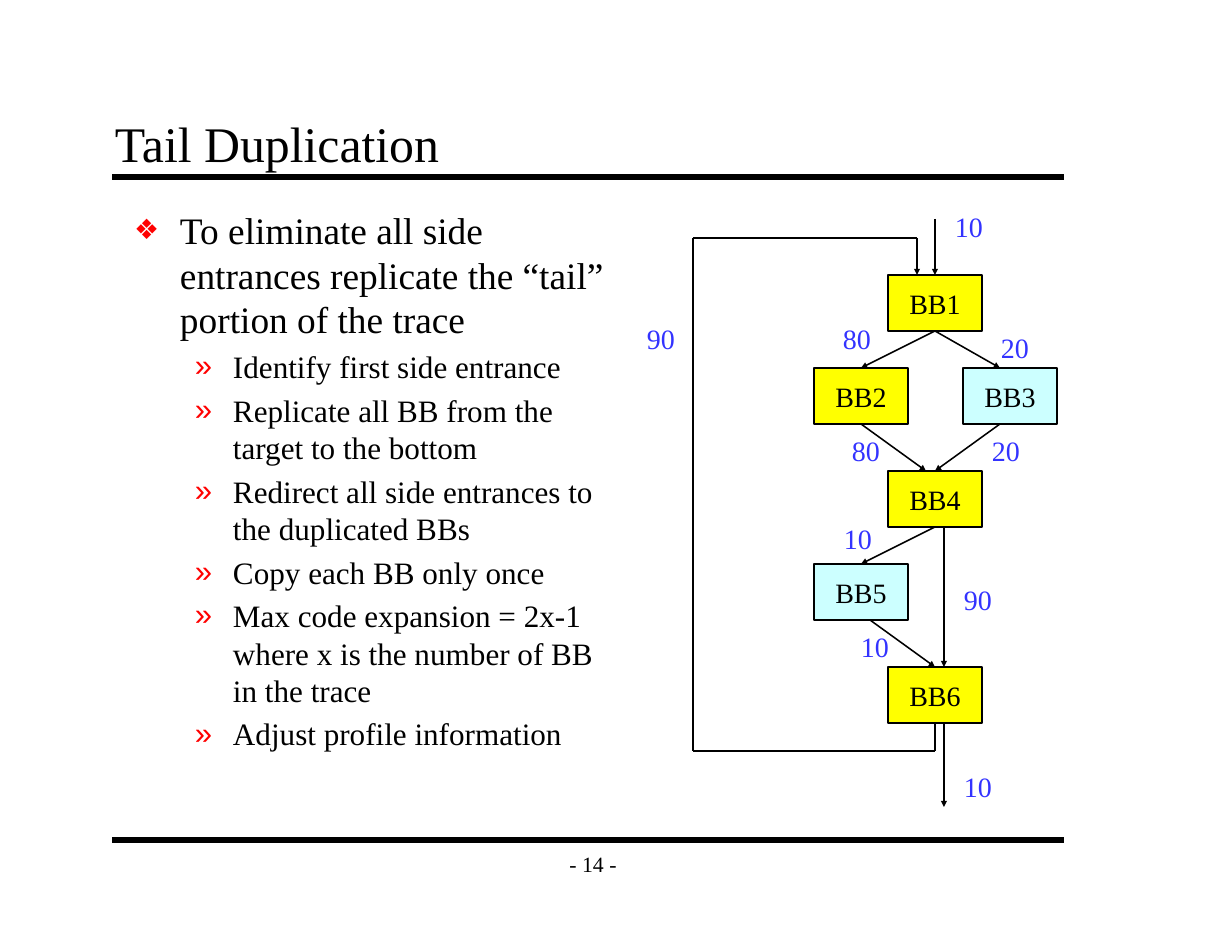
from lxml import etree
from pptx import Presentation
from pptx import util as u
from pptx.dml.color import RGBColor
from pptx.enum import shapes, text
from pptx.oxml.ns import qn

# Content
COLORS = {"ink": "000000", "trace": "FFFF00", "side": "CCFFFF",
          "weight": "3333FF", "bullet": "FF0000"}
FONT = "Times New Roman"
TITLE = "Tail Duplication"
PAGE = "- 14 -"
POINTS = [
    (0, "To eliminate all side entrances replicate the “tail” portion of the trace"),
    (1, "Identify first side entrance"),
    (1, "Replicate all BB from the target to the bottom"),
    (1, "Redirect all side entrances to the duplicated BBs"),
    (1, "Copy each BB only once"),
    (1, "Max code expansion = 2x-1 where x is the number of BB in the trace"),
    (1, "Adjust profile information"),
]
# Per level: text size, bullet, bullet size %, left margin px, hanging indent px
LEVELS = [(24, "❖", 75, 46, 46), (20, "»", 100, 99, 38)]

# Flow graph: name -> (column, top, kind)
LEFT, MIDDLE, RIGHT = 814, 888, 963
BLOCK_W, BLOCK_H = 94, 56
BLOCKS = {
    "BB1": (MIDDLE, 275, "trace"), "BB2": (LEFT, 368, "trace"),
    "BB3": (RIGHT, 368, "side"), "BB4": (MIDDLE, 471, "trace"),
    "BB5": (LEFT, 564, "side"), "BB6": (MIDDLE, 667, "trace"),
}
TOP, BOTTOM = 0, 2
# Ends are (block, side) or (x, y)
ARROWS = [
    ((935, 219), ("BB1", TOP)),
    (("BB1", BOTTOM), ("BB2", TOP)),
    (("BB1", BOTTOM), (1000, 368)),
    (("BB2", BOTTOM), (926, 471)),
    ((1000, 424), ("BB4", TOP)),
    (("BB4", BOTTOM), ("BB5", TOP)),
    ((944, 527), (944, 667)),
    ((870, 620), ("BB6", TOP)),
    ((944, 723), (944, 807)),
]
BACK_EDGE = [("BB6", BOTTOM), (935, 751), (693, 751), (693, 238), (917, 238), (917, 275)]
WEIGHTS = [
    ("10", 943, 205), ("90", 635, 317), ("80", 831, 317), ("20", 989, 326),
    ("80", 840, 429), ("20", 980, 429), ("10", 832, 517), ("90", 952, 578),
    ("10", 849, 625), ("10", 952, 765),
]
RULES = [177, 840]


def px(n):
    return u.Emu(round(n * 914400 / 112))


def rgb(name):
    return RGBColor.from_string(COLORS[name])


def set_all(target, values):
    for key, value in values.items():
        setattr(target, key, value)


def write(paragraph, words, size, color="ink", align=text.PP_ALIGN.LEFT):
    paragraph.alignment = align
    run = paragraph.add_run()
    run.text = words
    set_all(run.font, {"name": FONT, "size": u.Pt(size)})
    run.font.color.rgb = rgb(color)


def place(shape, x, y, w, h):
    set_all(shape, {"left": px(x), "top": px(y), "width": px(w), "height": px(h)})


def frame(shape, anchor, wrap=True):
    tf = shape.text_frame
    set_all(tf, {"margin_left": px(12), "margin_right": px(12),
                 "margin_top": px(5), "margin_bottom": px(5),
                 "vertical_anchor": anchor, "word_wrap": wrap,
                 "auto_size": text.MSO_AUTO_SIZE.NONE})
    return tf


def add_bullet(paragraph, char, percent, margin, hang):
    ppr = paragraph._p.get_or_add_pPr()
    ppr.set("marL", str(px(margin)))
    ppr.set("indent", str(-px(hang)))
    color = etree.SubElement(ppr, qn("a:buClr"))
    etree.SubElement(color, qn("a:srgbClr"), val=COLORS["bullet"])
    etree.SubElement(ppr, qn("a:buSzPct"), val=str(percent * 1000))
    etree.SubElement(ppr, qn("a:buFont"), typeface="Arial")
    etree.SubElement(ppr, qn("a:buChar"), char=char)


def end_point(end):
    if end[0] not in BLOCKS:
        return end
    x, y, _ = BLOCKS[end[0]]
    return x + BLOCK_W // 2, y + (BLOCK_H if end[1] == BOTTOM else 0)


def add_line(start, end, width=1, arrow=False):
    points = [px(n) for n in end_point(start) + end_point(end)]
    line = slide.shapes.add_connector(shapes.MSO_CONNECTOR.STRAIGHT, *points)
    if start[0] in boxes:
        line.begin_connect(boxes[start[0]], start[1])
    if end[0] in boxes:
        line.end_connect(boxes[end[0]], end[1])
    line.line.width = u.Pt(width)
    line.line.color.rgb = rgb("ink")
    if arrow:
        etree.SubElement(line.line._get_or_add_ln(), qn("a:tailEnd"),
                         type="triangle", w="sm", len="sm")
    etree.SubElement(line._element.spPr, qn("a:effectLst"))


prs = Presentation()
set_all(prs, {"slide_width": u.Inches(11), "slide_height": u.Inches(8.5)})
slide = prs.slides.add_slide(prs.slide_layouts[1])
boxes = {}

# Rules and page number
for y in RULES:
    add_line((112, y), (1064, y), width=4)
page = slide.shapes.add_textbox(px(551), px(840), px(84), px(47))
write(frame(page, text.MSO_ANCHOR.MIDDLE, False).paragraphs[0], PAGE, 14,
      align=text.PP_ALIGN.CENTER)

# Title and list
title, body = slide.placeholders
place(title, 103, 103, 952, 74)
write(frame(title, text.MSO_ANCHOR.BOTTOM).paragraphs[0], TITLE, 32)
place(body, 122, 202, 513, 638)
points_frame = frame(body, text.MSO_ANCHOR.TOP)
for i, (level, words) in enumerate(POINTS):
    paragraph = points_frame.add_paragraph() if i else points_frame.paragraphs[0]
    paragraph.level = level
    size, *bullet = LEVELS[level]
    write(paragraph, words, size)
    add_bullet(paragraph, *bullet)

# Basic blocks
for name, (x, y, kind) in BLOCKS.items():
    box = slide.shapes.add_shape(shapes.MSO_SHAPE.RECTANGLE,
                                 px(x), px(y), px(BLOCK_W), px(BLOCK_H))
    box.shadow.inherit = False
    box.fill.solid()
    box.fill.fore_color.rgb = rgb(kind)
    box.line.color.rgb = rgb("ink")
    box.line.width = u.Pt(1)
    write(frame(box, text.MSO_ANCHOR.MIDDLE, False).paragraphs[0], name, 18,
          align=text.PP_ALIGN.CENTER)
    boxes[name] = box

# Control flow edges
for start, end in ARROWS:
    add_line(start, end, arrow=True)
for start, end in zip(BACK_EDGE, BACK_EDGE[1:]):
    add_line(start, end, arrow=end == BACK_EDGE[-1])

# Edge weights
for weight, x, y in WEIGHTS:
    label = slide.shapes.add_textbox(px(x), px(y), px(50), px(45))
    write(frame(label, text.MSO_ANCHOR.TOP, False).paragraphs[0], weight, 18, "weight")

prs.save("out.pptx")
